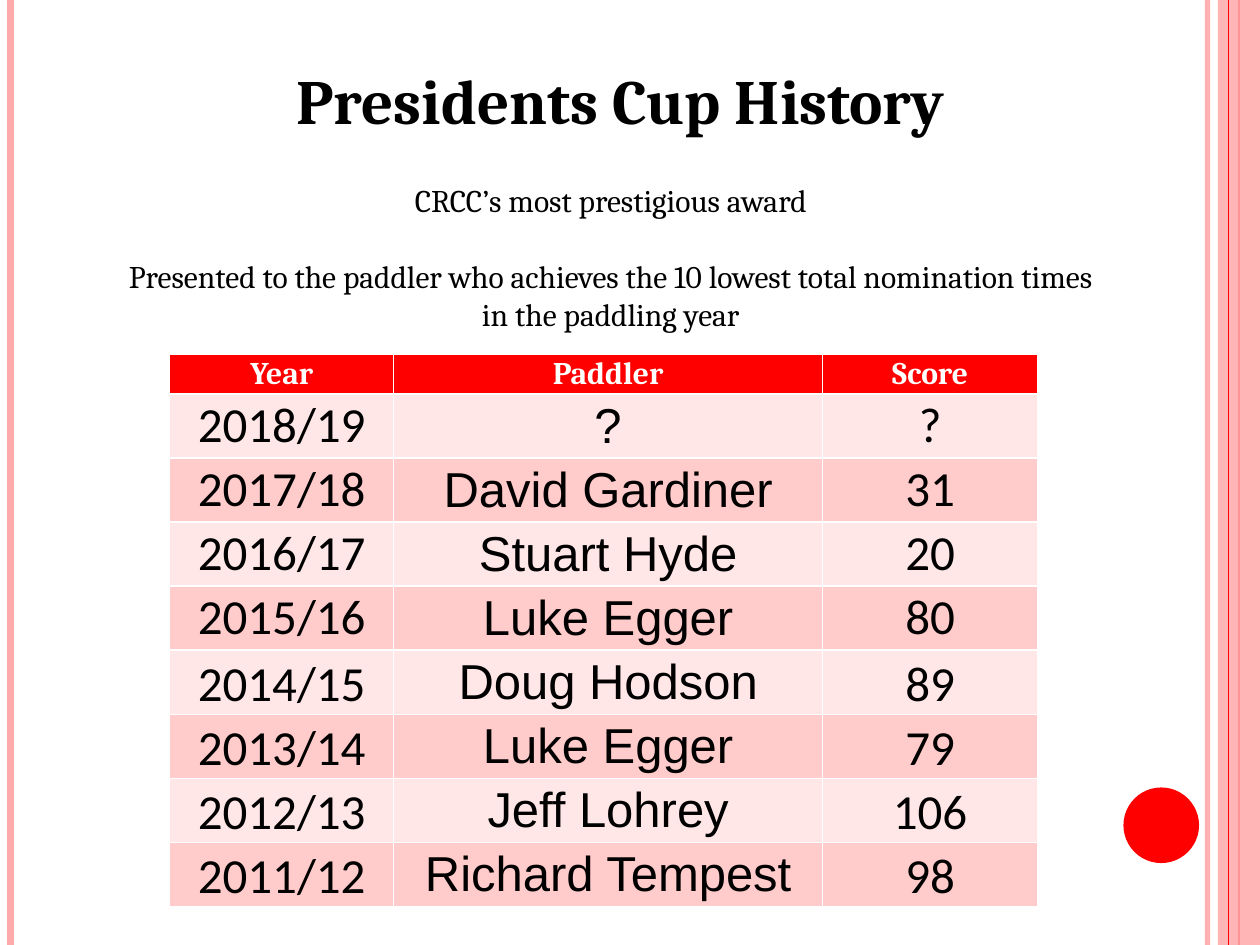
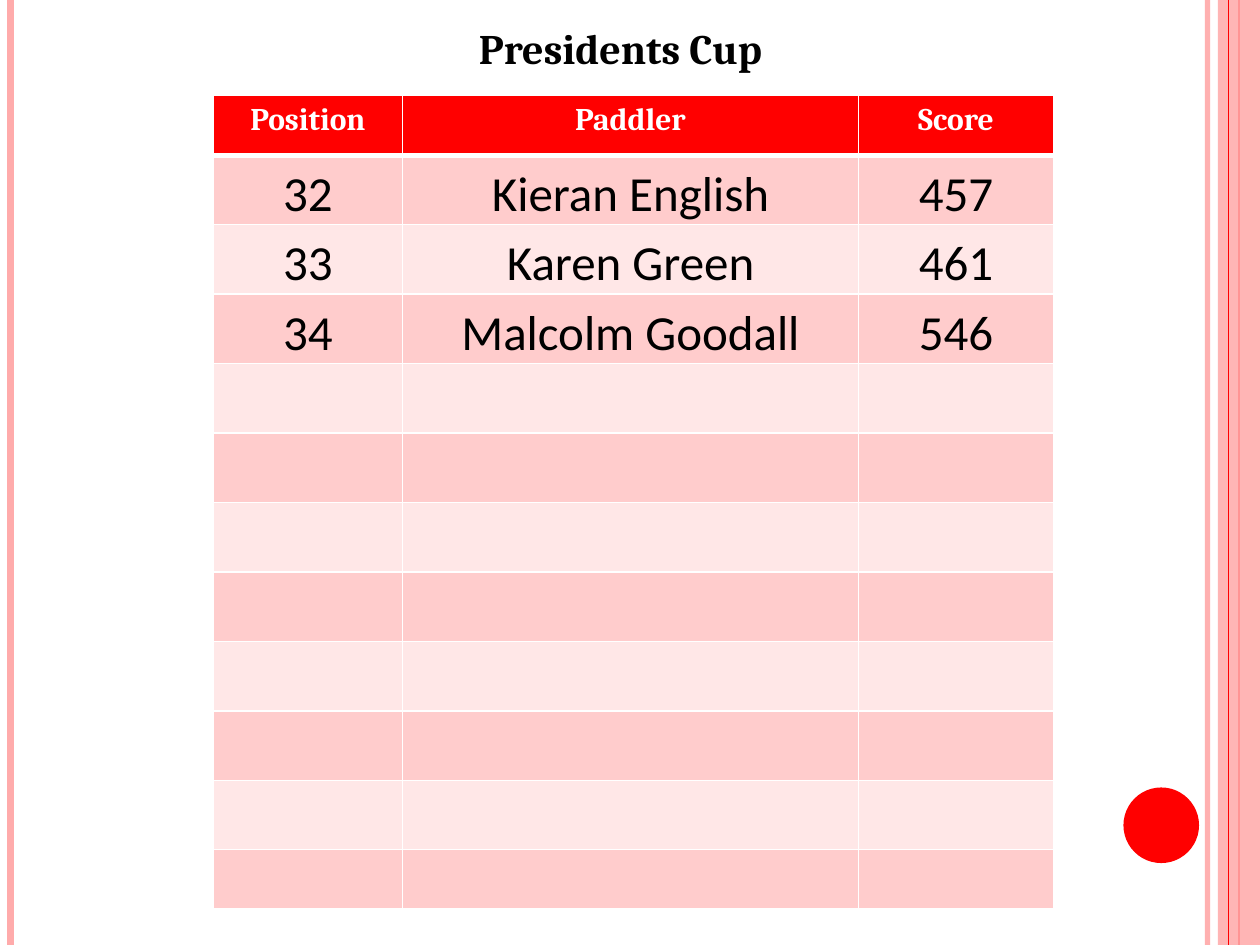
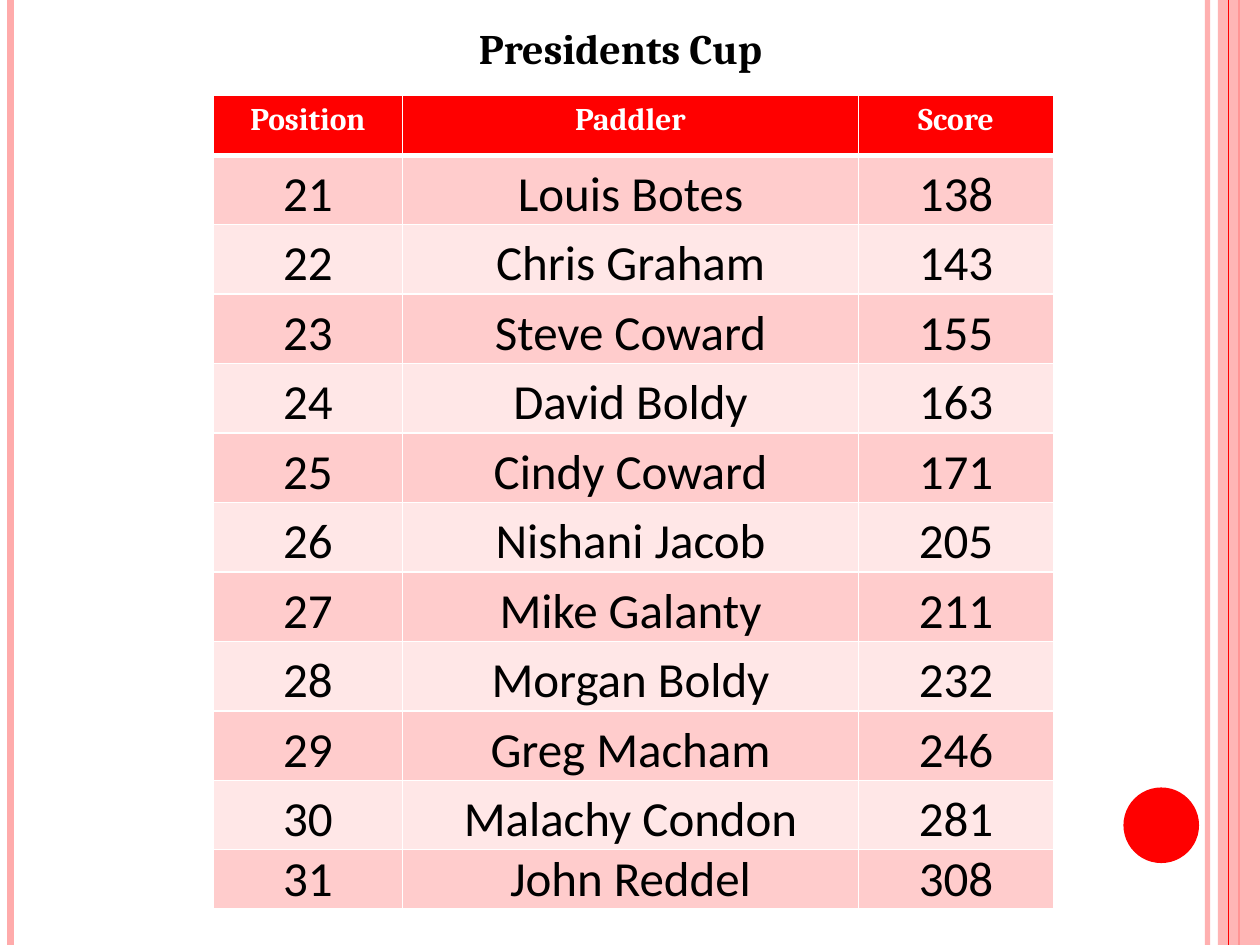
from lxml.etree import SubElement
from pptx import Presentation
from pptx.dml.color import RGBColor
from pptx.enum.shapes import MSO_CONNECTOR, MSO_SHAPE
from pptx.enum.text import MSO_ANCHOR, PP_ALIGN
from pptx.oxml.ns import qn
from pptx.util import Pt

SLIDE_W, SLIDE_H = 720, 540
RED, PINK, WHITE, BLACK = "FF0000", "FFABAB", "FFFFFF", "000000"
PALE, HISTORY_BAND, RANKING_BAND = "FFE7E7", "FFCBCB", "FFCCCC"
HEADING_FONT, BODY_FONT, NAME_FONT = "Cambria", "Calibri", "Arial"

HISTORY = [
    ("Year", "Paddler", "Score"),
    ("2018/19", "?", "?"),
    ("2017/18", "David Gardiner", "31"),
    ("2016/17", "Stuart Hyde", "20"),
    ("2015/16", "Luke Egger", "80"),
    ("2014/15", "Doug Hodson", "89"),
    ("2013/14", "Luke Egger", "79"),
    ("2012/13", "Jeff Lohrey", "106"),
    ("2011/12", "Richard Tempest", "98"),
]
RANKING_HEADER = ("Position", "Paddler", "Score")
RANKING_ROWS = 11
LAST_PLACES = [
    ("32", "Kieran English", "457"),
    ("33", "Karen Green", "461"),
    ("34", "Malcolm Goodall", "546"),
]
MIDDLE_PLACES = [
    ("21", "Louis Botes", "138"),
    ("22", "Chris Graham", "143"),
    ("23", "Steve Coward", "155"),
    ("24", "David Boldy", "163"),
    ("25", "Cindy Coward", "171"),
    ("26", "Nishani Jacob", "205"),
    ("27", "Mike Galanty", "211"),
    ("28", "Morgan Boldy", "232"),
    ("29", "Greg Macham", "246"),
    ("30", "Malachy Condon", "281"),
    ("31", "John Reddel", "308"),
]


def rgb(value):
    return RGBColor.from_string(value)


def set_alpha(fill_parent, percent):
    color = fill_parent.find(".//" + qn("a:srgbClr"))
    SubElement(color, qn("a:alpha"), val=str(percent * 1000))


def style_paragraph(p, size, font=HEADING_FONT, color=BLACK, bold=False):
    p.alignment = PP_ALIGN.CENTER
    for r in p.runs:
        r.font.size = Pt(size)
        r.font.name = font
        r.font.bold = bold
        r.font.color.rgb = rgb(color)


def add_stripe(s, x, width, color, alpha=100):
    """Draw a vertical line over the full slide height."""
    line = s.shapes.add_connector(MSO_CONNECTOR.STRAIGHT, Pt(x), 0, Pt(x), Pt(SLIDE_H))
    line.line.width = Pt(width)
    line.line.color.rgb = rgb(color)
    properties = line._element.spPr
    if alpha < 100:
        set_alpha(properties, alpha)
    SubElement(properties, qn("a:effectLst"))


def add_block(s, kind, box, color):
    sp = s.shapes.add_shape(kind, *map(Pt, box))
    sp.shadow.inherit = False
    sp.fill.solid()
    sp.fill.fore_color.rgb = rgb(color)
    sp.line.fill.background()
    return sp


def add_frame(s):
    """Draw the side stripes, right band and dot shared by all slides."""
    add_stripe(s, 690, 3, PINK, 93)
    add_stripe(s, 6, 4.5, PINK)
    add_stripe(s, 708, 1.5, RED)
    band = add_block(s, MSO_SHAPE.RECTANGLE, (696, 0, SLIDE_W - 696, SLIDE_H), PINK)
    set_alpha(band._element.spPr, 87)
    add_stripe(s, 702, 0.75, RED)
    add_block(s, MSO_SHAPE.OVAL, (642, 450, 43.2, 43.2), RED)


def add_text(s, box, lines, size, bold=False, gap=0):
    tf = s.shapes.add_textbox(*map(Pt, box)).text_frame
    tf.word_wrap = True
    tf.text = "\n".join(lines)
    for i, p in enumerate(tf.paragraphs):
        style_paragraph(p, size, bold=bold)
        if i:
            p.space_before = Pt(gap)


def set_borders(cell, top, bottom):
    properties = cell._tc.get_or_add_tcPr()
    for side, width in (("L", 1), ("R", 1), ("T", top), ("B", bottom)):
        line = SubElement(properties, qn("a:ln" + side), w=str(Pt(width)))
        fill = SubElement(line, qn("a:solidFill"))
        SubElement(fill, qn("a:srgbClr"), val=WHITE)


def remove_margins(cell):
    cell.margin_left = cell.margin_right = cell.margin_top = cell.margin_bottom = 0


def add_grid(s, left, top, widths, heights, rows, bands, rule_row, rule_width):
    """Add a banded table with a thicker rule below row rule_row."""
    frame = s.shapes.add_table(len(heights), len(widths), Pt(left), Pt(top),
                               Pt(sum(widths)), Pt(sum(heights)))
    table = frame.table
    for column, width in zip(table.columns, widths):
        column.width = Pt(width)
    for i, height in enumerate(heights):
        table.rows[i].height = Pt(height)
        for j in range(len(widths)):
            cell = table.cell(i, j)
            set_borders(cell, rule_width if i == rule_row + 1 else 1,
                        rule_width if i == rule_row else 1)
            cell.fill.solid()
            cell.fill.fore_color.rgb = rgb(bands[(i - 1) % 2] if i else RED)
            if i < len(rows):
                cell.text = rows[i][j]
                p = cell.text_frame.paragraphs[0]
                if i:
                    style_paragraph(p, 28, BODY_FONT)
                else:
                    style_paragraph(p, 18, color=WHITE, bold=True)
    return table


def add_slide(prs, title, title_top, title_size):
    s = prs.slides.add_slide(prs.slide_layouts[6])
    add_frame(s)
    add_text(s, (65.5, title_top, 578, title_size * 1.4), [title], title_size, bold=True)
    return s


def add_history_slide(prs):
    s = add_slide(prs, "Presidents Cup History", 31.7, 36)
    add_text(s, (60, 100, 578, 94), [
        "CRCC’s most prestigious award",
        "Presented to the paddler who achieves the 10 lowest total nomination "
        "times in the paddling year",
    ], 18, gap=21.7)
    table = add_grid(s, 97, 202.2, (128, 245, 123), [23] + [36.6] * 8, HISTORY,
                     (PALE, HISTORY_BAND), rule_row=1, rule_width=1.5)
    for i in range(len(HISTORY)):
        for j in range(3):
            cell = table.cell(i, j)
            remove_margins(cell)
            low = i >= 5 and j != 1
            cell.vertical_anchor = MSO_ANCHOR.BOTTOM if low else MSO_ANCHOR.MIDDLE
        if i:
            style_paragraph(table.cell(i, 1).text_frame.paragraphs[0], 28, NAME_FONT)


def add_ranking_slide(prs, places):
    s = add_slide(prs, "Presidents Cup", 9.4, 24)
    heights = [34] + [39.7] * (RANKING_ROWS - 1) + [34]
    table = add_grid(s, 122, 54.7, (108, 260.6, 111.4), heights,
                     [RANKING_HEADER] + places, (RANKING_BAND, PALE),
                     rule_row=0, rule_width=3)
    for i in range(1, len(places) + 1):
        for cell in table.rows[i].cells:
            remove_margins(cell)
            cell.vertical_anchor = MSO_ANCHOR.BOTTOM


def main():
    prs = Presentation()
    prs.slide_width, prs.slide_height = Pt(SLIDE_W), Pt(SLIDE_H)
    add_history_slide(prs)
    add_ranking_slide(prs, LAST_PLACES)
    add_ranking_slide(prs, MIDDLE_PLACES)
    prs.save("out.pptx")


if __name__ == "__main__":
    main()
